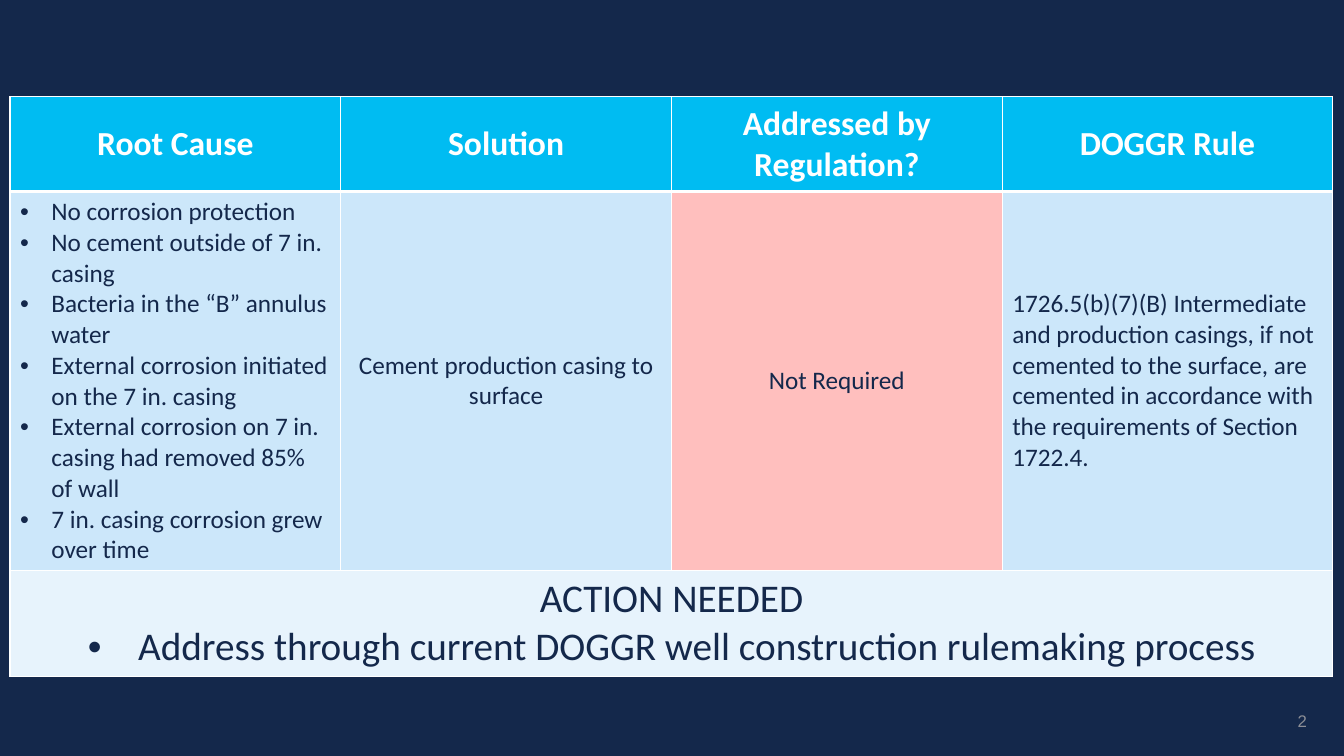
from lxml import etree
from pptx import Presentation
from pptx.dml.color import RGBColor
from pptx.enum.text import MSO_ANCHOR, PP_ALIGN
from pptx.oxml.ns import qn
from pptx.util import Inches, Pt

LEFT, CENTER, RIGHT = PP_ALIGN.LEFT, PP_ALIGN.CENTER, PP_ALIGN.RIGHT
MIDDLE = MSO_ANCHOR.MIDDLE

COLORS = {
    "navy": "14284B", "white": "FFFFFF", "header": "00BCF2", "body": "CCE7FA",
    "alert": "FFBFBE", "action": "E7F3FC", "number": "8C8E96",
}
HEADER_STYLE = {"size": Pt(24), "bold": True, "name": "Calibri"}
BODY_STYLE = {"size": Pt(18), "bold": False, "name": "Calibri"}
ACTION_STYLE = {"size": Pt(28), "bold": False, "name": "Calibri"}
NUMBER_STYLE = {"size": Pt(12), "bold": False, "name": "Arial"}

HEADINGS = ["Root Cause", "Solution", "Addressed by Regulation?", "DOGGR Rule"]
ROOT_CAUSES = [
    "No corrosion protection",
    "No cement outside of 7 in. casing",
    "Bacteria in the “B” annulus water",
    "External corrosion initiated on the 7 in. casing",
    "External corrosion on 7 in. casing had removed 85% of wall",
    "7 in. casing corrosion grew over time",
]
SOLUTION = "Cement production casing to surface"
STATUS = "Not Required"
RULE = ("1726.5(b)(7)(B) Intermediate and production casings, if not cemented "
        "to the surface, are cemented in accordance with the requirements of "
        "Section 1722.4.")
ACTIONS = ["ACTION NEEDED",
           "Address through current DOGGR well construction rulemaking process"]
ROW_HEIGHTS = [0.94, 3.76, 1.05]


def rgb(color):
    return RGBColor.from_string(COLORS[color])


def write_lines(frame, lines, style, color, align, indent=0, first_bullet=0):
    """Write one paragraph per line, bulleted from first_bullet if indent is set."""
    for index, line in enumerate(lines):
        paragraph = frame.paragraphs[0] if index == 0 else frame.add_paragraph()
        paragraph.alignment = align
        run = paragraph.add_run()
        run.text = line
        run.font.color.rgb = rgb(color)
        for attribute, value in style.items():
            setattr(run.font, attribute, value)
        if indent and index >= first_bullet:
            properties = paragraph._p.get_or_add_pPr()
            properties.set("marL", str(Inches(indent)))
            properties.set("indent", str(-Inches(indent)))
            etree.SubElement(properties, qn("a:buFont"), typeface="Arial")
            etree.SubElement(properties, qn("a:buChar"), char="•")


def format_cell(cell, fill, top=1, bottom=1):
    """Give the cell white borders, with widths in points, and a fill."""
    cell.vertical_anchor = MIDDLE
    properties = cell._tc.get_or_add_tcPr()
    for side, width in {"L": 1, "R": 1, "T": top, "B": bottom}.items():
        border = etree.SubElement(properties, qn(f"a:ln{side}"), w=str(Pt(width)))
        solid = etree.SubElement(border, qn("a:solidFill"))
        etree.SubElement(solid, qn("a:srgbClr"), val=COLORS["white"])
    cell.fill.solid()
    cell.fill.fore_color.rgb = rgb(fill)


def add_findings_table(slide, left, top, width):
    table = slide.shapes.add_table(
        len(ROW_HEIGHTS), len(HEADINGS), left, top, width,
        Inches(sum(ROW_HEIGHTS))).table
    for row, height in zip(table.rows, ROW_HEIGHTS):
        row.height = Inches(height)

    for column, heading in enumerate(HEADINGS):
        cell = table.cell(0, column)
        format_cell(cell, "header", bottom=3)
        write_lines(cell.text_frame, [heading], HEADER_STYLE, "white", CENTER)

    findings = [
        (ROOT_CAUSES, "body", LEFT, 0.31),
        ([SOLUTION], "body", CENTER, 0),
        ([STATUS], "alert", CENTER, 0),
        ([RULE], "body", LEFT, 0),
    ]
    for column, (lines, fill, align, indent) in enumerate(findings):
        cell = table.cell(1, column)
        format_cell(cell, fill, top=3)
        write_lines(cell.text_frame, lines, BODY_STYLE, "navy", align, indent)

    action = table.cell(2, 0)
    action.merge(table.cell(2, len(HEADINGS) - 1))
    for column in range(len(HEADINGS)):
        format_cell(table.cell(2, column), "action")
    write_lines(action.text_frame, ACTIONS, ACTION_STYLE, "navy", CENTER,
                indent=0.5, first_bullet=1)


def add_slide_number(slide, left, top, width, height):
    frame = slide.shapes.add_textbox(left, top, width, height).text_frame
    frame.word_wrap = True
    frame.vertical_anchor = MIDDLE
    write_lines(frame, ["2"], NUMBER_STYLE, "number", RIGHT)


def main():
    deck = Presentation()
    deck.slide_width, deck.slide_height = Inches(13.33), Inches(7.5)
    slide = deck.slides.add_slide(deck.slide_layouts[6])
    slide.background.fill.solid()
    slide.background.fill.fore_color.rgb = rgb("navy")
    add_slide_number(slide, Inches(12.48), Inches(6.95), Inches(0.58), Inches(0.4))
    add_findings_table(slide, Inches(0.1), Inches(0.96), Inches(13.12))
    deck.save("out.pptx")


if __name__ == "__main__":
    main()
